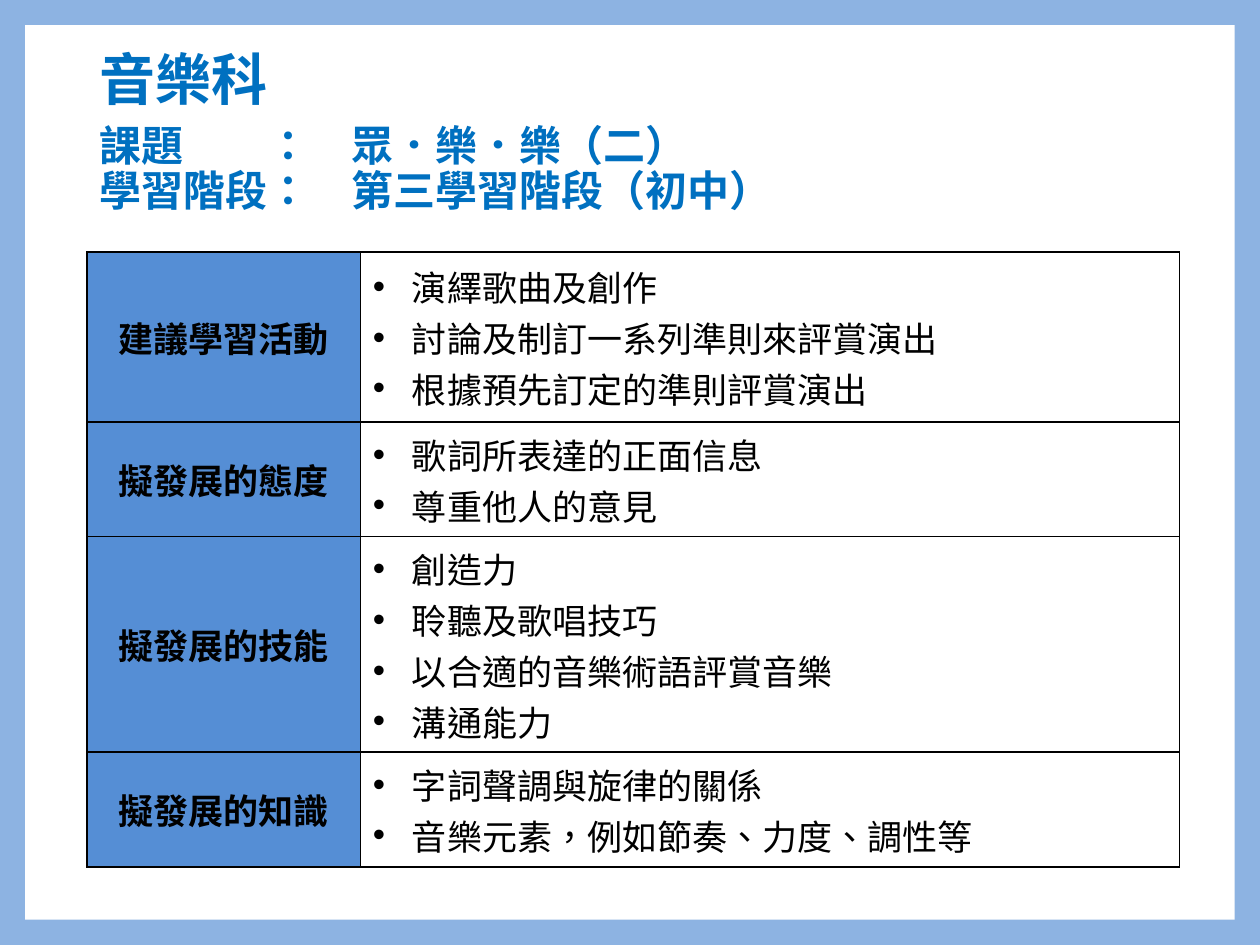
from lxml.etree import SubElement
from pptx import Presentation
from pptx.dml.color import RGBColor
from pptx.enum.lang import MSO_LANGUAGE_ID as Language
from pptx.enum.shapes import MSO_SHAPE
from pptx.enum.text import MSO_ANCHOR as Anchor, PP_ALIGN as Align
from pptx.oxml.ns import qn
from pptx.util import Inches, Pt

SUBJECT = "音樂科"
TOPIC_LINES = "課題\t：　眾．樂．樂（二）\v學習階段：　第三學習階段（初中）"
ROWS = [
    ("建議學習活動", 1.35, ["演繹歌曲及創作", "討論及制訂一系列準則來評賞演出", "根據預先訂定的準則評賞演出"]),
    ("擬發展的態度", 0.91, ["歌詞所表達的正面信息", "尊重他人的意見"]),
    ("擬發展的技能", 1.71, ["創造力", "聆聽及歌唱技巧", "以合適的音樂術語評賞音樂", "溝通能力"]),
    ("擬發展的知識", 0.91, ["字詞聲調與旋律的關係", "音樂元素，例如節奏、力度、調性等"]),
]
COLUMN_WIDTHS = (2.17, 6.5)
LEFT, TABLE_TOP, FRAME_MARGIN = 0.69, 2, 0.2
BULLET_INDENT = Inches(0.31)

CJK = "Noto Sans CJK SC"
THEME = {
    "frame": "8DB3E2", "page": "FFFFFF", "label": "558ED5", "border": "000000",
    "subject": {"name": CJK, "size": Pt(32), "bold": True, "color": "0070C0"},
    "topic": {"name": CJK, "size": Pt(24), "bold": True, "color": "0070C0"},
    "heading": {"name": "Arial", "size": Pt(20), "bold": True, "color": "000000"},
    "item": {"name": CJK, "size": Pt(20), "bold": False, "color": "000000"},
}


def paint(fill, color):
    fill.solid()
    fill.fore_color.rgb = RGBColor.from_string(color)


def format_text(para, style):
    """Apply a theme style; the language sets Traditional Chinese punctuation."""
    for span in para.runs:
        for key, value in THEME[style].items():
            if key == "color":
                span.font.color.rgb = RGBColor.from_string(value)
            else:
                setattr(span.font, key, value)
        span.font.language_id = Language.TRADITIONAL_CHINESE
        SubElement(span.font._element, qn("a:ea"), typeface=CJK)


def add_title(page, text, style, top, height):
    box = page.shapes.add_textbox(Inches(LEFT), Inches(top), Inches(8.62), Inches(height))
    frame = box.text_frame
    frame.word_wrap = True
    frame.vertical_anchor = Anchor.MIDDLE
    para = frame.paragraphs[0]
    para.text = text
    para.line_spacing = 0.9
    format_text(para, style)
    return para


def add_tab_stop(para, position):
    stops = SubElement(para._p.get_or_add_pPr(), qn("a:tabLst"))
    SubElement(stops, qn("a:tab"), pos=str(position), algn="l")


def add_bullet(para):
    props = para._p.get_or_add_pPr()
    props.set("marL", str(BULLET_INDENT))
    props.set("indent", str(-BULLET_INDENT))
    SubElement(props, qn("a:buFont"), typeface="Arial")
    SubElement(props, qn("a:buChar"), char="•")


def add_borders(cell):
    props = cell._tc.get_or_add_tcPr()
    for side in ("lnL", "lnR", "lnT", "lnB"):
        line = SubElement(props, qn(f"a:{side}"), w=str(Pt(1)))
        fill = SubElement(line, qn("a:solidFill"))
        SubElement(fill, qn("a:srgbClr"), val=THEME["border"])


def fill_cell(cell, lines, style, color):
    add_borders(cell)
    paint(cell.fill, color)
    cell.vertical_anchor = Anchor.MIDDLE
    cell.text = "\n".join(lines)
    for para in cell.text_frame.paragraphs:
        format_text(para, style)
        if style == "item":
            add_bullet(para)
        else:
            para.alignment = Align.CENTER


def add_plan_table(page):
    height = sum(row_height for _, row_height, _ in ROWS)
    table = page.shapes.add_table(
        len(ROWS), len(COLUMN_WIDTHS), Inches(LEFT), Inches(TABLE_TOP),
        Inches(sum(COLUMN_WIDTHS)), Inches(height)).table
    table.first_row = table.horz_banding = False
    for column, width in zip(table.columns, COLUMN_WIDTHS):
        column.width = Inches(width)
    for row, (heading, row_height, items) in zip(table.rows, ROWS):
        row.height = Inches(row_height)
        fill_cell(row.cells[0], [heading], "heading", THEME["label"])
        fill_cell(row.cells[1], items, "item", THEME["page"])


def main():
    deck = Presentation()
    deck.slide_width, deck.slide_height = Inches(10), Inches(7.5)
    page = deck.slides.add_slide(deck.slide_layouts[6])
    paint(page.background.fill, THEME["frame"])
    margin = Inches(FRAME_MARGIN)
    panel = page.shapes.add_shape(
        MSO_SHAPE.RECTANGLE, margin, margin,
        deck.slide_width - 2 * margin, deck.slide_height - 2 * margin)
    panel.shadow.inherit = False
    paint(panel.fill, THEME["page"])
    panel.line.fill.background()
    add_title(page, SUBJECT, "subject", 0.35, 0.61)
    topic = add_title(page, TOPIC_LINES, "topic", 0.87, 0.96)
    add_tab_stop(topic, 4 * THEME["topic"]["size"])
    add_plan_table(page)
    deck.save("out.pptx")


if __name__ == "__main__":
    main()
